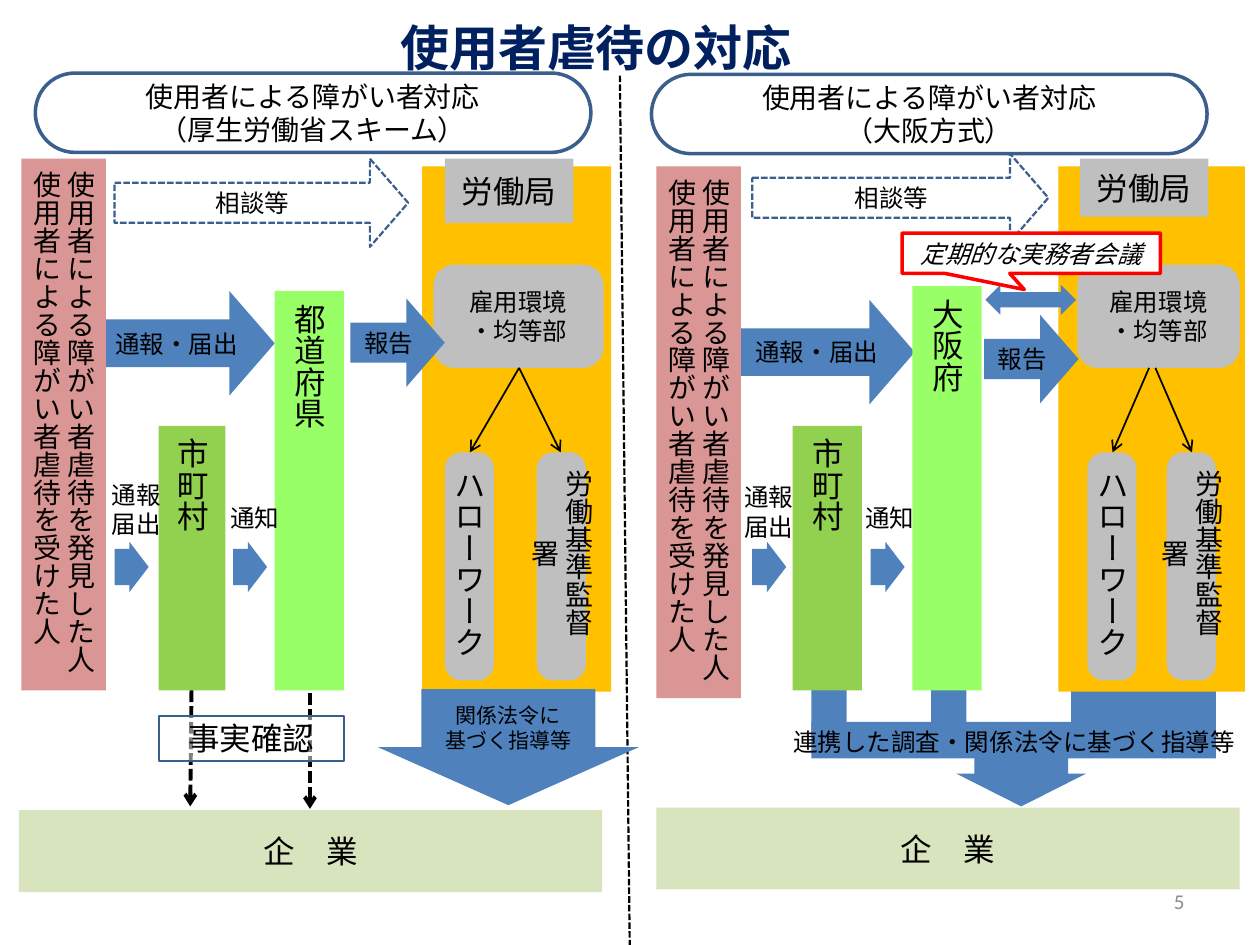
from dataclasses import dataclass

from lxml import etree
from pptx import Presentation
from pptx.dml.color import RGBColor
from pptx.enum.dml import MSO_LINE
from pptx.enum.shapes import MSO_CONNECTOR, MSO_SHAPE
from pptx.enum.text import MSO_ANCHOR, PP_ALIGN
from pptx.oxml.ns import qn
from pptx.util import Inches, Pt

RECT, ROUND = MSO_SHAPE.RECTANGLE, MSO_SHAPE.ROUNDED_RECTANGLE
RIGHT, DOWN = MSO_SHAPE.RIGHT_ARROW, MSO_SHAPE.DOWN_ARROW
BOTH, CALLOUT = MSO_SHAPE.LEFT_RIGHT_ARROW, MSO_SHAPE.RECTANGULAR_CALLOUT
STRAIGHT = MSO_CONNECTOR.STRAIGHT
DASH = MSO_LINE.SQUARE_DOT
LEFT, CENTER, END = PP_ALIGN.LEFT, PP_ALIGN.CENTER, PP_ALIGN.RIGHT
TOP, MIDDLE = MSO_ANCHOR.TOP, MSO_ANCHOR.MIDDLE


@dataclass(frozen=True)
class Theme:
    """Colours, fonts and type sizes of the slide."""
    font: str = "Noto Sans CJK JP"
    number_font: str = "Calibri"
    blue: str = "4F81BD"
    outline: str = "3A5F8C"
    orange: str = "FFC000"
    pink: str = "D99694"
    green: str = "92D050"
    lime: str = "99FF66"
    grey: str = "BFBFBF"
    pale: str = "D7E4BD"
    white: str = "FFFFFF"
    black: str = "000000"
    red: str = "FF0000"
    navy: str = "002060"
    muted: str = "8C8C8C"
    title: int = 28
    large: int = 18
    medium: int = 16
    label: int = 14
    small: int = 12


THEME = Theme()
FLOW = (0.455, 0.434)
STEP = (0.717, 0.565)

NATIONAL = {
    "heading": (0.28, 0.58, 4.41, 0.63), "scheme": "（厚生労働省スキーム）",
    "notice": (0.79, 2.31, 1.39, 0.83), "bureau area": (3.35, 1.32, 1.5, 4.17),
    "finder": (0.17, 1.26, 0.67, 4.22), "city": (1.26, 3.38, 0.53, 2.1),
    "prefecture": (2.18, 2.31, 0.55, 3.17), "prefecture name": "都道府県",
    "employment": (3.44, 2.1, 1.35, 0.82), "bureau": (3.53, 1.26, 1.02, 0.51),
    "job office": (3.53, 3.59, 0.39, 1.81), "standards": (4.26, 3.59, 0.39, 1.81),
    "company": (0.15, 6.43, 4.63, 0.65), "steps": (0.91, 1.85),
    "report": (2.78, 2.37, 0.75, 0.7), "consult": (0.91, 1.26, 2.33, 0.7),
    "branches": ((4.12, 3.73), (4.12, 4.45)),
    "notify": (0.79, 3.76, 0.59, 0.57), "inform": (1.73, 3.94, 0.59, 0.34),
}
OSAKA = {
    "heading": (5.17, 0.59, 4.41, 0.63), "scheme": "（大阪方式）",
    "notice": (5.87, 2.38, 1.39, 0.83), "bureau area": (8.4, 1.32, 1.48, 4.17),
    "finder": (5.21, 1.32, 0.67, 4.22), "city": (6.29, 3.38, 0.55, 2.1),
    "prefecture": (7.24, 2.27, 0.55, 3.21), "prefecture name": "大阪府",
    "employment": (8.55, 2.1, 1.29, 0.82), "bureau": (8.57, 1.26, 1.02, 0.46),
    "job office": (8.63, 3.59, 0.39, 1.81), "standards": (9.26, 3.59, 0.39, 1.81),
    "company": (5.21, 6.41, 4.63, 0.65), "steps": (5.97, 6.91),
    "report": (7.81, 2.5, 0.75, 0.7), "consult": (5.97, 1.22, 2.35, 0.7),
    "branches": ((9.12, 8.83), (9.17, 9.46)),
    "notify": (5.81, 3.78, 0.59, 0.57), "inform": (6.77, 3.94, 0.59, 0.34),
}


def write(frame, lines, size, color=THEME.black, align=CENTER, font=THEME.font,
          bold=False, italic=False):
    """Write one paragraph per line."""
    for index, line in enumerate(lines):
        para = frame.add_paragraph() if index else frame.paragraphs[0]
        para.alignment = align
        span = para.add_run()
        span.text = line
        span.font.size, span.font.name = Pt(size), font
        span.font.bold, span.font.italic = bold, italic
        span.font.color.rgb = RGBColor.from_string(color)
        etree.SubElement(span.font._element, qn("a:ea"), typeface=font)


def add_block(slide, kind, place, fill, lines=(), size=THEME.label, adjust=(),
              line=None, width=1.25, dash=None, align=CENTER, vertical=False,
              alpha=None, italic=False):
    """Add a filled preset shape with optional outline and text."""
    box = slide.shapes.add_shape(kind, *map(Inches, place))
    box.shadow.inherit = False
    for index, value in enumerate(adjust):
        box.adjustments[index] = value
    box.fill.solid()
    box.fill.fore_color.rgb = RGBColor.from_string(fill)
    if alpha:
        color = box.fill._xPr.find(qn("a:solidFill"))[0]
        etree.SubElement(color, qn("a:alpha"), val=str(alpha * 1000))
    if line:
        box.line.color.rgb = RGBColor.from_string(line)
        box.line.width = Pt(width)
        box.line.dash_style = dash
    else:
        box.line.fill.background()
    frame = box.text_frame
    frame.word_wrap, frame.vertical_anchor = True, MIDDLE
    if vertical:
        frame._txBody.bodyPr.set("vert", "eaVert")
    write(frame, lines, size, align=align, italic=italic)


def add_label(slide, place, lines, align=LEFT, wrap=False, anchor=TOP,
              size=THEME.label, **style):
    """Add a text box without fill."""
    frame = slide.shapes.add_textbox(*map(Inches, place)).text_frame
    frame.word_wrap, frame.vertical_anchor = wrap, anchor
    write(frame, lines, size, align=align, **style)


def add_line(slide, start, end, width, dash=None, arrow=True):
    """Add a black straight line, with an arrowhead at its end by default."""
    link = slide.shapes.add_connector(STRAIGHT, *map(Inches, (*start, *end)))
    link.line.color.rgb = RGBColor.from_string(THEME.black)
    link.line.width = Pt(width)
    link.line.dash_style = dash
    if arrow:
        etree.SubElement(link.line._get_or_add_ln(), qn("a:tailEnd"), type="arrow")
    etree.SubElement(link._element.spPr, qn("a:effectLst"))


def add_panel(slide, panel):
    """Draw the reporting flow shared by both schemes."""
    add_block(slide, RIGHT, panel["notice"], THEME.blue, ["通報・届出"], adjust=FLOW)
    add_block(slide, RECT, panel["bureau area"], THEME.orange)
    add_block(slide, ROUND, panel["heading"], THEME.white,
              ["使用者による障がい者対応", panel["scheme"]], THEME.medium,
              (0.5,), THEME.outline, 2)
    add_block(slide, RECT, panel["finder"], THEME.pink,
              ["使用者による障がい者虐待を発見した人", "使用者による障がい者虐待を受けた人"],
              THEME.medium, align=LEFT, vertical=True)
    add_block(slide, RECT, panel["city"], THEME.green, ["市町村"],
              THEME.large, vertical=True)
    add_block(slide, RECT, panel["prefecture"], THEME.lime,
              [panel["prefecture name"]], THEME.large, vertical=True)
    add_block(slide, ROUND, panel["employment"], THEME.grey,
              ["雇用環境", "・均等部"], adjust=(0.2,))
    add_block(slide, RECT, panel["bureau"], THEME.grey, ["労働局"], THEME.large)
    for office, name, size in (("job office", "ハローワーク", THEME.large),
                               ("standards", "労働基準監督署", THEME.medium)):
        add_block(slide, ROUND, panel[office], THEME.grey, [name], size,
                  (0.332,), vertical=True)
    add_block(slide, RECT, panel["company"], THEME.pale, ["企　業"], THEME.large)
    for left in panel["steps"]:
        add_block(slide, RIGHT, (left, 4.3, 0.27, 0.4), THEME.blue, adjust=STEP)
    add_block(slide, RIGHT, panel["report"], THEME.blue, ["報告"], adjust=FLOW)
    add_block(slide, RIGHT, panel["consult"], THEME.white, ["相談等"],
              adjust=FLOW, line=THEME.outline, dash=DASH)
    for start, end in panel["branches"]:
        add_line(slide, (start, 2.92), (end, 3.59), 1)
    add_label(slide, panel["notify"], ["通報", "届出"])
    add_label(slide, panel["inform"], ["通知"])


def add_national_actions(slide):
    """Draw the separate guidance and fact-finding of the national scheme."""
    add_block(slide, DOWN, (3, 5.47, 2.07, 0.92), THEME.blue,
              ["関係法令に", "基づく指導等"], THEME.small, (0.667, 0.5))
    add_line(slide, (1.52, 5.48), (1.51, 6.4), 2.25, DASH)
    add_line(slide, (2.46, 5.5), (2.46, 6.42), 2.25, DASH)
    add_block(slide, RECT, (1.26, 5.68, 1.47, 0.36), THEME.white, ["事実確認"],
              THEME.large, line=THEME.outline, alpha=50)


def add_joint_stems(slide):
    """Draw the stems that join the Osaka bodies to one action."""
    for left, width in ((6.44, 0.28), (7.39, 0.28), (8.5, 1.15)):
        add_block(slide, RECT, (left, 5.2, width, 0.66), THEME.blue)


def add_joint_actions(slide):
    """Draw the joint investigation and the regular meeting in Osaka."""
    add_block(slide, RECT, (6.44, 5.73, 3.21, 0.29), THEME.blue)
    add_block(slide, DOWN, (7.59, 5.88, 1.03, 0.52), THEME.blue, adjust=(0.722, 0.5))
    add_label(slide, (6.18, 5.72, 3.74, 0.34),
              ["連携した調査・関係法令に基づく指導等"], CENTER)
    add_block(slide, BOTH, (7.82, 2.26, 0.72, 0.24), THEME.blue)
    add_block(slide, CALLOUT, (7.16, 1.85, 2.05, 0.32), THEME.white,
              ["定期的な実務者会議"], adjust=(-0.027, 0.899), line=THEME.red,
              width=2, italic=True)


def add_title(slide, text):
    """Place and format the slide title."""
    title = slide.shapes.title
    title.left, title.top, title.width, title.height = map(
        Inches, (2.05, 0.09, 5.36, 0.57))
    title.text_frame.vertical_anchor = TOP
    write(title.text_frame, [text], THEME.title, THEME.navy, bold=True)


def main():
    """Build and save the deck."""
    deck = Presentation()
    deck.slide_width, deck.slide_height = Inches(10), Inches(7.5)
    slide = deck.slides.add_slide(deck.slide_layouts[5])
    add_title(slide, "使用者虐待の対応")
    add_joint_stems(slide)
    add_line(slide, (4.92, 0.6), (5, 7.69), 1.25, DASH, arrow=False)
    add_panel(slide, NATIONAL)
    add_national_actions(slide)
    add_panel(slide, OSAKA)
    add_joint_actions(slide)
    add_label(slide, (7.17, 6.95, 2.33, 0.4), ["5"], END, True, MIDDLE,
              THEME.small, color=THEME.muted, font=THEME.number_font)
    deck.save("out.pptx")


if __name__ == "__main__":
    main()
